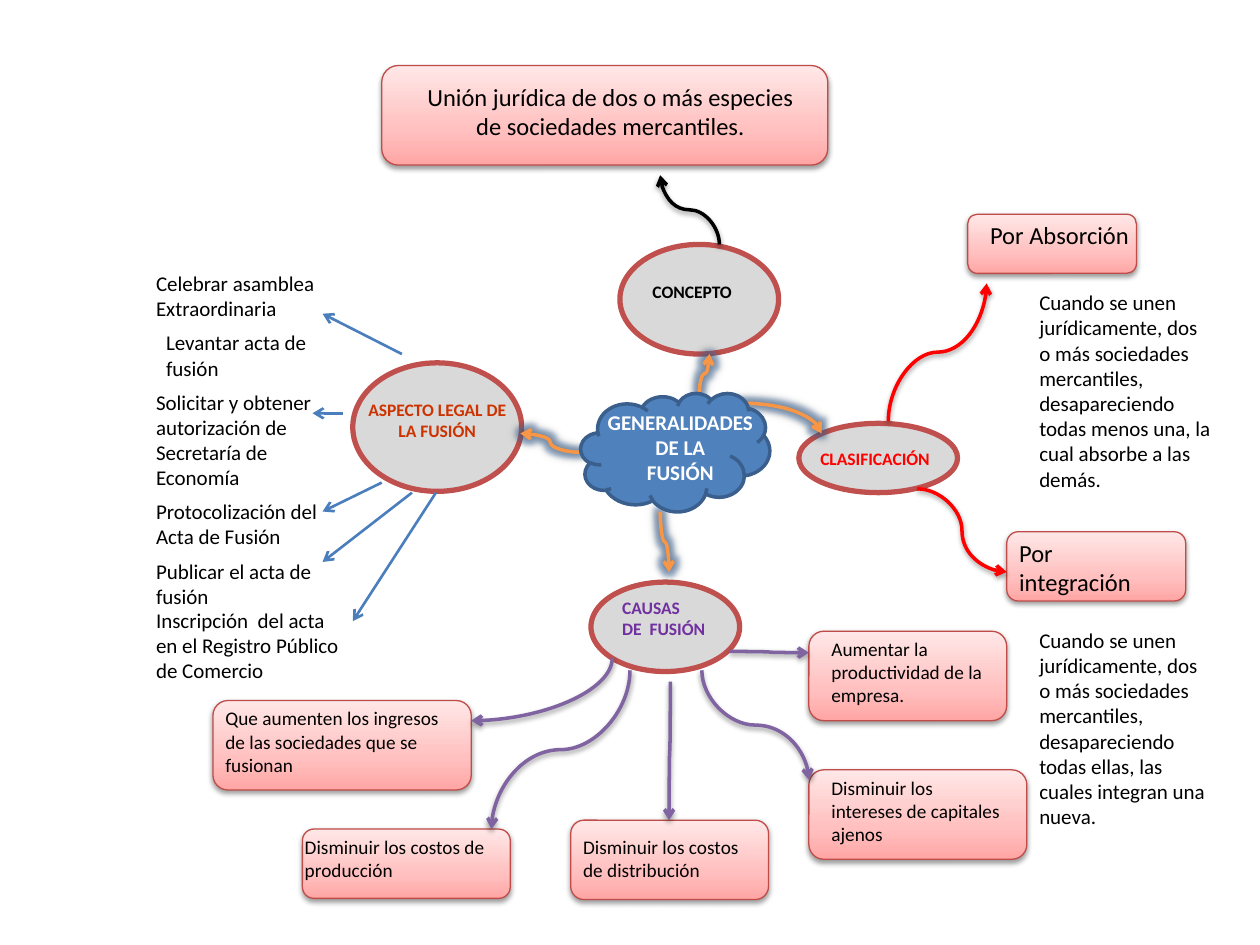
from lxml.etree import SubElement
from pptx import Presentation
from pptx.dml.color import RGBColor
from pptx.enum.shapes import MSO_CONNECTOR as CONN, MSO_SHAPE as SHAPE
from pptx.enum.text import MSO_AUTO_SIZE as FIT, PP_ALIGN as ALIGN
from pptx.oxml.ns import qn
from pptx.util import Inches, Pt

ORANGE, PURPLE, RED, BLUE, BLACK = "F79646", "8064A2", "FF0000", "4B7EBC", "000000"
PINK_STOPS = ((0, "FFA6A5"), (35, "FFC0BF"), (100, "FFE7E7"))

# Left, top, width, height
ELLIPSES = [
    (4.92, 1.94, 1.26, 0.87),
    (6.34, 3.36, 1.26, 0.55),
    (4.69, 4.62, 1.18, 0.71),
    (2.8, 2.88, 1.34, 1.02),
]

# Box, then the label's own frame, its text and size
CARDS = [
    ((3.03, 0.52, 3.54, 0.79), (3.19, 0.6, 3.31, 0.57),
     "Unión jurídica de dos o más especies de sociedades mercantiles.", 14, ALIGN.CENTER),
    ((7.68, 1.7, 1.34, 0.47), (7.76, 1.7, 1.34, 0.34), "Por Absorción", 14, None),
    ((7.99, 4.22, 1.42, 0.55), (7.99, 4.22, 1.26, 0.57), "Por integración", 14, None),
    ((1.69, 5.56, 2.05, 0.71), (1.69, 5.56, 2.05, 0.66),
     "Que aumenten los ingresos de las sociedades que se fusionan", 11, None),
    ((2.4, 6.58, 1.65, 0.55), (2.32, 6.58, 1.81, 0.47),
     "Disminuir los costos de producción", 11, None),
    ((4.53, 6.51, 1.57, 0.63), (4.53, 6.58, 1.57, 0.47),
     "Disminuir los costos de distribución", 11, None),
    ((6.42, 6.11, 1.73, 0.71), (6.5, 6.11, 1.57, 0.66),
     "Disminuir los  intereses de capitales ajenos", 11, None),
    ((6.42, 5.01, 1.57, 0.71), (6.5, 5.01, 1.65, 0.66),
     "Aumentar la productividad de la empresa.", 11, None),
]

# Frame, text, size, colour, alignment
TOPIC_LABELS = [
    ((4.45, 3.2, 1.9, 0.71), "GENERALIDADES\nDE LA\nFUSIÓN", 12, "FFFFFF", ALIGN.CENTER),
    ((5.08, 2.18, 1.02, 0.27), "CONCEPTO", 10, BLACK, None),
    ((6.26, 3.51, 1.37, 0.27), "CLASIFICACIÓN", 10, RED, ALIGN.CENTER),
    ((4.84, 4.69, 0.87, 0.44), "CAUSAS  DE  FUSIÓN", 10, "7030A0", None),
    ((2.8, 3.12, 1.34, 0.44), "ASPECTO LEGAL DE\nLA FUSIÓN", 10, "CC3300", ALIGN.CENTER),
]

NOTES = [
    ((8.15, 2.25, 1.57, 1.72), "Cuando se unen jurídicamente, dos o más sociedades mercantiles, "
     "desapareciendo todas menos una, la cual absorbe a las demás."),
    ((8.15, 4.93, 1.57, 1.72), "Cuando se unen jurídicamente, dos o más sociedades mercantiles, "
     "desapareciendo todas ellas, las cuales integran una nueva."),
    ((1.14, 2.1, 1.57, 0.5), "Celebrar asamblea Extraordinaria"),
    ((1.22, 2.57, 1.57, 0.5), "Levantar acta de fusión"),
    ((1.14, 3.04, 1.57, 0.91), "Solicitar y obtener autorización de Secretaría de Economía"),
    ((1.14, 3.91, 1.57, 0.5), "Protocolización del Acta de Fusión"),
    ((1.14, 4.38, 1.57, 0.5), "Publicar el acta de fusión"),
    ((1.14, 4.77, 1.73, 0.71), "Inscripción  del acta en el Registro Público de Comercio"),
]

# Start, end, leaves vertically, single bend
CENTRE_ARROWS = [
    ((5.87, 3.2), (6.52, 3.44), False, True),
    ((5.24, 4.06), (5.31, 4.54), True, False),
    ((4.61, 3.59), (4.13, 3.44), False, False),
    ((5.55, 3.12), (5.63, 2.81), True, False),
]

# Colour, then the same fields
BRANCH_ARROWS = [
    (BLACK, (5.71, 1.94), (5.24, 1.39), True, False),
    (RED, (7.05, 3.34), (7.83, 2.25), True, False),
    (RED, (7.28, 3.88), (7.99, 4.54), False, False),
    (PURPLE, (4.86, 5.22), (3.74, 5.72), True, True),
    (PURPLE, (5, 5.32), (3.9, 6.58), True, False),
    (PURPLE, (5.32, 5.41), (5.31, 6.51), True, False),
    (PURPLE, (5.57, 5.32), (6.42, 6.19), True, False),
    (PURPLE, (5.79, 5.17), (6.42, 5.18), False, False),
]

LEGAL_ARROWS = [
    ((3.19, 2.81), (2.56, 2.49)),
    ((2.72, 3.28), (2.48, 3.28)),
    ((3.03, 3.83), (2.56, 4.06)),
    ((3.27, 3.91), (2.56, 4.46)),
    ((3.46, 3.91), (2.8, 4.93)),
]


def rgb(value):
    return RGBColor.from_string(value)


def add_color(parent, value, alpha=100):
    clr = SubElement(parent, qn("a:srgbClr"), val=value)
    if alpha < 100:
        SubElement(clr, qn("a:alpha"), val=str(alpha * 1000))


def add_shadow(effects, alpha, blur, dist, angle):
    shadow = SubElement(effects, qn("a:outerShdw"), blurRad=str(Pt(blur)), dist=str(Pt(dist)),
                        dir=str(angle * 60000), rotWithShape="0")
    add_color(shadow, BLACK, alpha)


def add_drop_shadow(effects):
    add_shadow(effects, 38, 3.1, 1.6, 90)


def add_halo(effects):
    glow = SubElement(effects, qn("a:glow"), rad=str(Pt(5)))
    add_color(glow, "4F81BD", 40)
    add_shadow(effects, 64, 4, 0, 0)


def add_node(slide, kind, box, line, width, fill=None):
    sp = slide.shapes.add_shape(kind, *map(Inches, box))
    sp.shadow.inherit = False
    sp.line.color.rgb = rgb(line)
    sp.line.width = Pt(width)
    if fill:
        sp.fill.solid()
        sp.fill.fore_color.rgb = rgb(fill)
    return sp


def add_card(slide, box):
    sp = add_node(slide, SHAPE.ROUNDED_RECTANGLE, box, "BF4C48", 0.75)
    sp.fill.gradient()
    sp.fill.gradient_angle = 90
    spPr = sp.element.spPr
    stops = spPr.find(".//" + qn("a:gsLst"))
    for stop in list(stops):
        stops.remove(stop)
    for pos, color in PINK_STOPS:
        add_color(SubElement(stops, qn("a:gs"), pos=str(pos * 1000)), color)
    add_drop_shadow(spPr.find(qn("a:effectLst")))


def add_text(slide, box, text, size, color=BLACK, align=None, bold=False):
    tf = slide.shapes.add_textbox(*map(Inches, box)).text_frame
    tf.word_wrap = True
    tf.auto_size = FIT.SHAPE_TO_FIT_TEXT
    tf.text = text
    for p in tf.paragraphs:
        p.alignment = align
        p.font.name = "Calibri"
        p.font.size = Pt(size)
        p.font.bold = bold
        p.font.color.rgb = rgb(color)


def add_arrow(slide, kind, start, end, color, width):
    cn = slide.shapes.add_connector(kind, *map(Inches, (*start, *end)))
    cn.line.color.rgb = rgb(color)
    cn.line.width = Pt(width)
    spPr = cn.element.spPr
    SubElement(spPr.find(qn("a:ln")), qn("a:tailEnd"), type="arrow")
    return spPr, SubElement(spPr, qn("a:effectLst"))


def add_curve(slide, color, start, end, vertical, single_bend, effect):
    (x1, y1), (x2, y2) = start, end
    if vertical:  # lay the curve out sideways about its centre, then turn it 90 degrees
        cx, cy = (x1 + x2) / 2, (y1 + y2) / 2
        dx, dy = (x2 - x1) / 2, (y2 - y1) / 2
        start, end = (cx - dy, cy + dx), (cx + dy, cy - dx)
    spPr, effects = add_arrow(slide, CONN.CURVE, start, end, color, 2)
    if vertical:
        spPr.find(qn("a:xfrm")).set("rot", str(90 * 60000))
    if single_bend:
        spPr.find(qn("a:prstGeom")).set("prst", "curvedConnector2")
    effect(effects)


def main():
    prs = Presentation()
    prs.slide_width, prs.slide_height = Inches(10), Inches(7.5)
    slide = prs.slides.add_slide(prs.slide_layouts[6])

    # Central topic and its main branches
    for box in ELLIPSES:
        add_node(slide, SHAPE.OVAL, box, "C0504D", 3, "D9D9D9")
    for arrow in CENTRE_ARROWS:
        add_curve(slide, ORANGE, *arrow, add_halo)
    add_node(slide, SHAPE.CLOUD, (4.61, 3.12, 1.5, 0.94), "3A5F8C", 2, "4F81BD")
    for label in TOPIC_LABELS:
        add_text(slide, *label, bold=True)

    # Cards and plain notes
    for box, frame, text, size, align in CARDS:
        add_card(slide, box)
        add_text(slide, frame, text, size, align=align)
    for frame, text in NOTES:
        add_text(slide, frame, text, 12)

    # Arrows from the branches to their details
    for arrow in BRANCH_ARROWS:
        add_curve(slide, *arrow, add_drop_shadow)
    for start, end in LEGAL_ARROWS:
        add_arrow(slide, CONN.STRAIGHT, start, end, BLUE, 1.5)

    prs.save("out.pptx")


if __name__ == "__main__":
    main()
